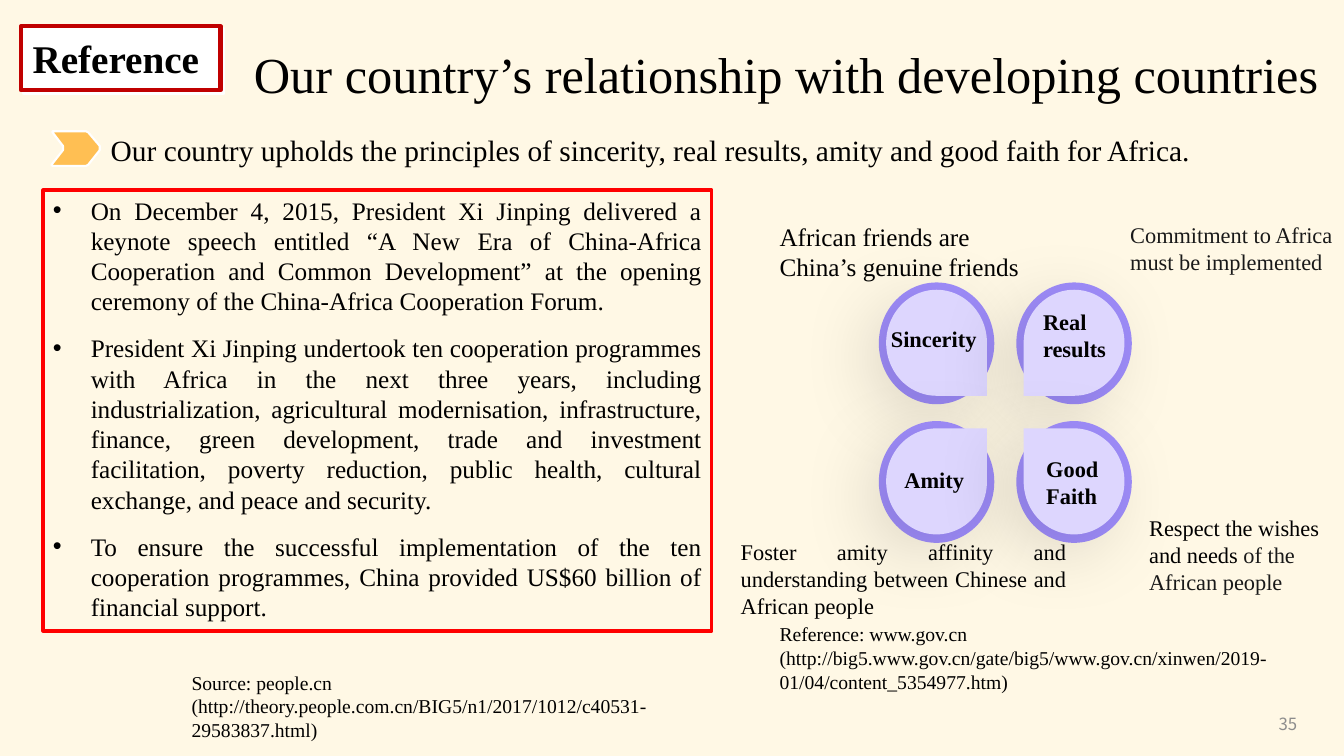
from lxml.etree import SubElement
from pptx import Presentation
from pptx.dml.color import RGBColor
from pptx.enum.shapes import MSO_SHAPE as SHAPE
from pptx.enum.text import MSO_ANCHOR as ANCHOR, PP_ALIGN as ALIGN
from pptx.oxml.ns import qn
from pptx.util import Pt

PX = 9525
FONT = "Times New Roman"
rgb = RGBColor.from_string


def write(sp, text, size, color="000000", bold=False, align=ALIGN.LEFT, anchor=ANCHOR.TOP, font=FONT):
    tf = sp.text_frame
    tf.word_wrap = True
    tf.vertical_anchor = anchor
    tf.text = text
    for p in tf.paragraphs:
        p.alignment = align
        for r in p.runs:
            r.font.name = font
            r.font.size = Pt(size)
            r.font.bold = bold
            r.font.color.rgb = rgb(color)
    return tf


def add_shadow(sp, color, alpha, blur, dist, angle):
    effects = sp._element.spPr.find(qn("a:effectLst"))
    shadow = SubElement(effects, qn("a:outerShdw"), blurRad=str(Pt(blur)), dist=str(Pt(dist)),
                        dir=str(angle * 60000), algn="ctr", rotWithShape="0")
    clr = SubElement(shadow, qn("a:srgbClr"), val=color)
    SubElement(clr, qn("a:alpha"), val=str(alpha * 1000))


prs = Presentation()
prs.slide_width = 1280 * PX
prs.slide_height = 720 * PX
s = prs.slides.add_slide(prs.slide_layouts[6])
s.background.fill.solid()
s.background.fill.fore_color.rgb = rgb("FFF8E5")

chevron = [(84, 157), (82, 158), (50, 158), (49, 157), (60, 143), (60, 139),
           (50, 126), (50, 125), (82, 125), (84, 126), (95, 139), (95, 143)]
fb = s.shapes.build_freeform(*chevron[0], scale=PX)
fb.add_line_segments(chevron[1:])
sp = fb.convert_to_shape()
sp.shadow.inherit = False
sp.fill.solid()
sp.fill.fore_color.rgb = rgb("FFBF53")
sp.line.color.rgb = rgb("FFFFFF")
sp.line.width = Pt(1.5)

for row in range(2):
    for col in range(2):
        x, y = 837 + 131 * col, 269 + 132 * row
        petal = [(SHAPE.OVAL, x, y, 110, 116, "9F8DFB"),
                 (SHAPE.TEAR, x + 7, y + 7, 96, 101, "DDD6FE")]
        for kind, left, top, w, h, color in petal:
            sp = s.shapes.add_shape(kind, left * PX, top * PX, w * PX, h * PX)
            sp.shadow.inherit = False
            sp.fill.solid()
            sp.fill.fore_color.rgb = rgb(color)
            sp.line.fill.background()
            xfrm = sp._element.spPr.find(qn("a:xfrm"))
            if col == 1:
                xfrm.set("flipH", "1")
            if row == 0:
                xfrm.set("flipV", "1")
            if kind == SHAPE.TEAR:
                add_shadow(sp, "000000", 15, 55, 15, 135)

principles = [
    ("Sincerity", 839, 305, 119, 36),
    ("Real results", 984, 289, 101, 61),
    ("Amity", 852, 439, 122, 36),
    ("Good Faith", 987, 429, 119, 61),
]
for text, x, y, w, h in principles:
    write(s.shapes.add_textbox(x * PX, y * PX, w * PX, h * PX), text, 16, bold=True)

notes = [
    ("Our country upholds the principles of sincerity, real results, amity and good faith for Africa.",
     96, 121, 1180, 43, 21, "000000", ALIGN.LEFT),
    ("African friends are China’s genuine friends", 733, 206, 253, 68, 18, "000000", ALIGN.LEFT),
    ("Commitment to Africa must be implemented", 1067, 206, 213, 87, 16, "191919", ALIGN.LEFT),
    ("Foster amity affinity and understanding between Chinese and African people",
     696, 508, 329, 87, 16, "000000", ALIGN.JUSTIFY),
    ("Reference: www.gov.cn\n"
     "(http://big5.www.gov.cn/gate/big5/www.gov.cn/xinwen/2019-01/04/content_5354977.htm)",
     733, 588, 526, 78, 14, "000000", ALIGN.LEFT),
    ("Source: people.cn (http://theory.people.com.cn/BIG5/n1/2017/1012/c40531-29583837.html)",
     173, 634, 497, 78, 14, "000000", ALIGN.LEFT),
]
for text, x, y, w, h, size, color, align in notes:
    write(s.shapes.add_textbox(x * PX, y * PX, w * PX, h * PX), text, size, color, align=align)

sp = s.shapes.add_textbox(1085 * PX, 485 * PX, 189 * PX, 87 * PX)
tf = write(sp, "Respect the wishes and needs ", 16)
r = tf.paragraphs[0].add_run()
r.text = "of the African people"
r.font.name = FONT
r.font.size = Pt(16)
r.font.color.rgb = rgb("191919")

sp = s.shapes.add_textbox(210 * PX, 8 * PX, 1078 * PX, 97 * PX)
tf = write(sp, "Our country’s relationship with developing countries", 36, align=ALIGN.CENTER)
tf.paragraphs[0].line_spacing = 1.5

speech = [
    "On December 4, 2015, President Xi Jinping delivered a keynote speech entitled “A New Era of "
    "China-Africa Cooperation and Common Development” at the opening ceremony of the China-Africa "
    "Cooperation Forum.",
    "President Xi Jinping undertook ten cooperation programmes with Africa in the next three years, "
    "including industrialization, agricultural modernisation, infrastructure, finance, green "
    "development, trade and investment facilitation, poverty reduction, public health, cultural "
    "exchange, and peace and security.",
    "To ensure the successful implementation of the ten cooperation programmes, China provided "
    "US$60 billion of financial support.",
]
sp = s.shapes.add_shape(SHAPE.RECTANGLE, 41 * PX, 181 * PX, 637 * PX, 420 * PX)
sp.shadow.inherit = False
sp.fill.background()
sp.line.color.rgb = rgb("FF0000")
sp.line.width = Pt(2.25)
tf = write(sp, "\n".join(speech), 18, align=ALIGN.JUSTIFY)
for i, p in enumerate(tf.paragraphs):
    p.space_before = Pt(6 if i else 0)
    p.space_after = Pt(6)
    pPr = p._p.get_or_add_pPr()
    pPr.set("marL", str(36 * PX))
    pPr.set("indent", str(-36 * PX))
    SubElement(pPr, qn("a:buFont"), typeface="Arial")
    SubElement(pPr, qn("a:buChar"), char="•")

sp = s.shapes.add_shape(SHAPE.RECTANGLE, 20 * PX, 25 * PX, 190 * PX, 61 * PX)
sp.shadow.inherit = False
sp.fill.solid()
sp.fill.fore_color.rgb = rgb("FFFFFF")
sp.line.color.rgb = rgb("C00000")
sp.line.width = Pt(3)
add_shadow(sp, "FFFFFF", 100, 0, 3, 45)
write(sp, "Reference ", 28, bold=True, align=ALIGN.CENTER, anchor=ANCHOR.MIDDLE)

sp = s.shapes.add_textbox(957 * PX, 670 * PX, 288 * PX, 38 * PX)
write(sp, "35", 12, "8C8C8C", align=ALIGN.RIGHT, anchor=ANCHOR.MIDDLE, font="Noto Sans CJK SC")

prs.save("out.pptx")
